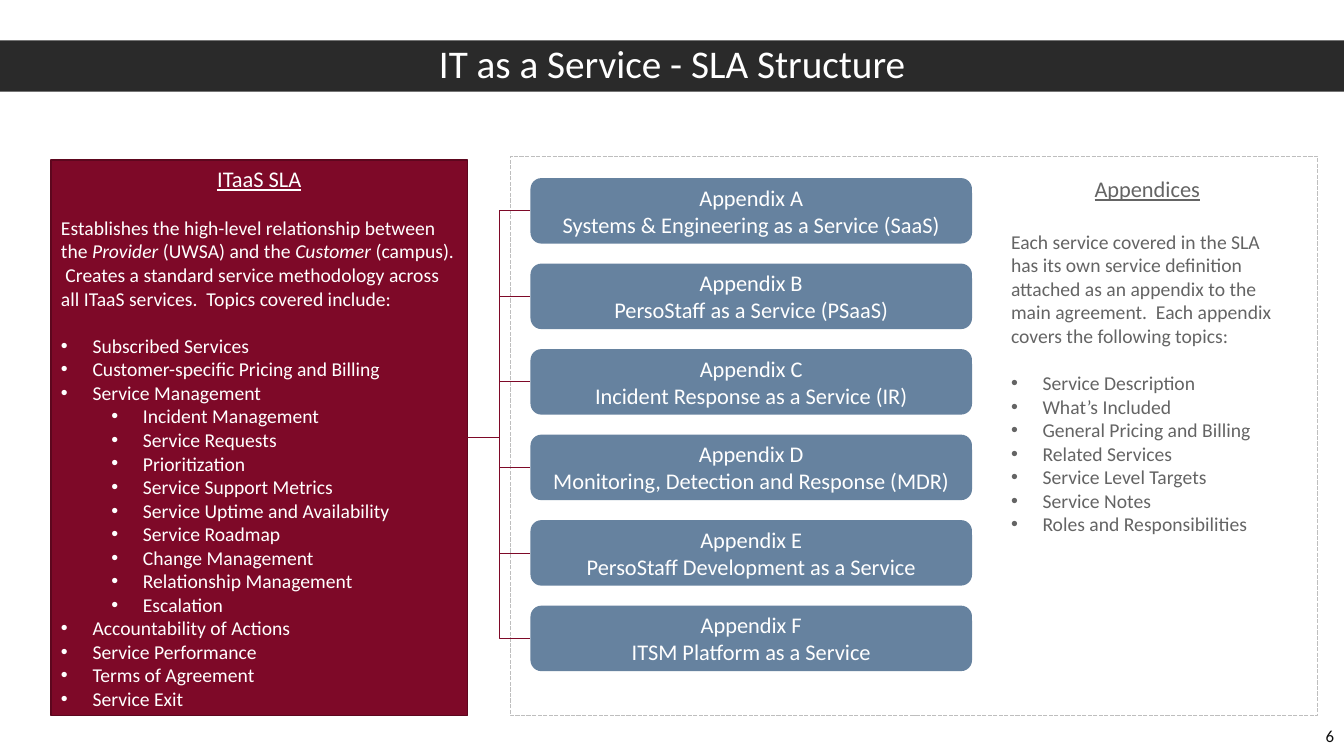
from lxml import etree
from pptx import Presentation
from pptx.dml.color import RGBColor
from pptx.enum.dml import MSO_LINE
from pptx.enum.shapes import MSO_CONNECTOR, MSO_SHAPE
from pptx.enum.text import MSO_ANCHOR, PP_ALIGN
from pptx.oxml.ns import qn
from pptx.util import Pt

RECTANGLE, ROUNDED = MSO_SHAPE.RECTANGLE, MSO_SHAPE.ROUNDED_RECTANGLE
ELBOW = MSO_CONNECTOR.ELBOW
LEFT, CENTER, RIGHT = PP_ALIGN.LEFT, PP_ALIGN.CENTER, PP_ALIGN.RIGHT
TOP, MIDDLE = MSO_ANCHOR.TOP, MSO_ANCHOR.MIDDLE
DASH = MSO_LINE.SQUARE_DOT

FONT = "Calibri"
COLORS = {
    "white": "FFFFFF", "title_bar": "2A2A2A", "number": "0D0D0D",
    "maroon": "7E0928", "maroon_edge": "5D071E", "blue": "66829F",
    "frame": "BEBEBE", "gray": "646464",
}
INDENT = 22.5
LEVEL_STEP = 36
BLANK_LINE = 17

SLA_INTRO = [
    ("Establishes the high-level relationship between the ", False),
    ("Provider", True),
    (" (UWSA) and the ", False),
    ("Customer", True),
    (" (campus).  Creates a standard service methodology across all ITaaS"
     " services.  Topics covered include:", False),
]
SLA_TOPICS = [
    ("Subscribed Services", 0),
    ("Customer-specific Pricing and Billing", 0),
    ("Service Management", 0),
    ("Incident Management", 1),
    ("Service Requests", 1),
    ("Prioritization", 1),
    ("Service Support Metrics", 1),
    ("Service Uptime and Availability", 1),
    ("Service Roadmap", 1),
    ("Change Management", 1),
    ("Relationship Management", 1),
    ("Escalation", 1),
    ("Accountability of Actions", 0),
    ("Service Performance", 0),
    ("Terms of Agreement", 0),
    ("Service Exit", 0),
]
APPENDICES = [
    "Systems & Engineering as a Service (SaaS)",
    "PersoStaff as a Service (PSaaS)",
    "Incident Response as a Service (IR)",
    "Monitoring, Detection and Response (MDR)",
    "PersoStaff Development as a Service",
    "ITSM Platform as a Service",
]
APPENDIX_INTRO = [
    ("Each service covered in the SLA has its own service definition attached"
     " as an appendix to the main agreement.  Each appendix covers the"
     " following topics:", False),
]
APPENDIX_TOPICS = [
    ("Service Description", 0),
    ("What’s Included", 0),
    ("General Pricing and Billing", 0),
    ("Related Services", 0),
    ("Service Level Targets", 0),
    ("Service Notes", 0),
    ("Roles and Responsibilities", 0),
]


def rgb(color):
    return RGBColor.from_string(COLORS[color])


def add_box(slide, preset, box, fill=None, line=None):
    shape = slide.shapes.add_shape(preset, *map(Pt, box))
    shape.shadow.inherit = False
    if fill:
        shape.fill.solid()
        shape.fill.fore_color.rgb = rgb(fill)
    else:
        shape.fill.background()
    if line:
        shape.line.color.rgb = rgb(line)
        shape.line.width = Pt(1)
    else:
        shape.line.fill.background()
    return shape


def add_text_box(slide, box, anchor):
    shape = slide.shapes.add_textbox(*map(Pt, box))
    shape.text_frame.word_wrap = True
    shape.text_frame.vertical_anchor = anchor
    return shape


def format_paragraph(paragraph, size, color, alignment):
    paragraph.alignment = alignment
    for run in paragraph.runs:
        run.font.name = FONT
        run.font.size = Pt(size)
        run.font.color.rgb = rgb(color)


def add_bullet(paragraph, level):
    paragraph.level = level
    properties = paragraph._p.get_or_add_pPr()
    properties.set("marL", str(Pt(INDENT + LEVEL_STEP * level)))
    properties.set("indent", str(-Pt(INDENT)))
    etree.SubElement(properties, qn("a:buFont"), typeface="Arial")
    etree.SubElement(properties, qn("a:buChar"), char="•")


def write_topics(text_frame, heading, intro, topics, color, heading_gap):
    text_frame.vertical_anchor = TOP
    text_frame.text = heading
    paragraph = text_frame.paragraphs[0]
    format_paragraph(paragraph, 16, color, CENTER)
    paragraph.runs[0].font.underline = True

    paragraph = text_frame.add_paragraph()
    for text, italic in intro:
        run = paragraph.add_run()
        run.text = text
        run.font.italic = italic
    paragraph.space_before = Pt(heading_gap)
    format_paragraph(paragraph, 14, color, LEFT)

    for index, (topic, level) in enumerate(topics):
        paragraph = text_frame.add_paragraph()
        paragraph.text = topic
        if index == 0:
            paragraph.space_before = Pt(BLANK_LINE)
        add_bullet(paragraph, level)
        format_paragraph(paragraph, 14, color, LEFT)


def add_title(slide, box):
    bar = add_box(slide, RECTANGLE, box, fill="title_bar")
    bar.text_frame.text = "IT as a Service - SLA Structure"
    paragraph = bar.text_frame.paragraphs[0]
    paragraph.line_spacing = 0.9
    format_paragraph(paragraph, 28, "white", CENTER)


def add_page_number(slide, box):
    number = add_text_box(slide, box, MIDDLE)
    number.text_frame.text = "6"
    format_paragraph(number.text_frame.paragraphs[0], 12, "number", RIGHT)


def add_sla(slide, box):
    panel = add_box(slide, RECTANGLE, box, "maroon", "maroon_edge")
    write_topics(panel.text_frame, "ITaaS SLA", SLA_INTRO, SLA_TOPICS,
                 "white", BLANK_LINE)
    return panel


def add_branch(slide, panel, card):
    connector = slide.shapes.add_connector(ELBOW, 0, 0, 0, 0)
    connector.begin_connect(panel, 3)
    connector.end_connect(card, 1)
    connector.line.color.rgb = rgb("maroon")
    connector.line.width = Pt(0.5)
    etree.SubElement(connector._element.spPr, qn("a:effectLst"))


def add_appendices(slide, box, panel):
    left, top, width, height = box
    frame = add_box(slide, RECTANGLE, box, line="frame")
    frame.line.dash_style = DASH

    card_height, pitch = 46.8, 61.08
    cards = []
    for index, service in enumerate(APPENDICES):
        card_top = top + 15.6 + index * pitch
        card = add_box(slide, ROUNDED,
                       (left + 14.4, card_top, 315.4, card_height), "blue")
        card.text_frame.text = f"Appendix {'ABCDEF'[index]}\n{service}"
        for paragraph in card.text_frame.paragraphs:
            format_paragraph(paragraph, 16, "white", CENTER)
        cards.append(card)
    for card in cards:
        add_branch(slide, panel, card)

    topics = add_text_box(slide, (left + 350.6, top + 10.1, 208.8, 266.4), TOP)
    write_topics(topics.text_frame, "Appendices", APPENDIX_INTRO,
                 APPENDIX_TOPICS, "gray", 19.5)


def main():
    presentation = Presentation()
    presentation.slide_width = Pt(960)
    presentation.slide_height = Pt(540)
    slide = presentation.slides.add_slide(presentation.slide_layouts[6])
    add_title(slide, (0, 28.8, 960, 36.7))
    add_page_number(slide, (744, 511.2, 216, 28.8))
    panel = add_sla(slide, (36.5, 114.4, 297.4, 396.7))
    add_appendices(slide, (364.5, 111.6, 576.7, 399.6), panel)
    presentation.save("out.pptx")


if __name__ == "__main__":
    main()
